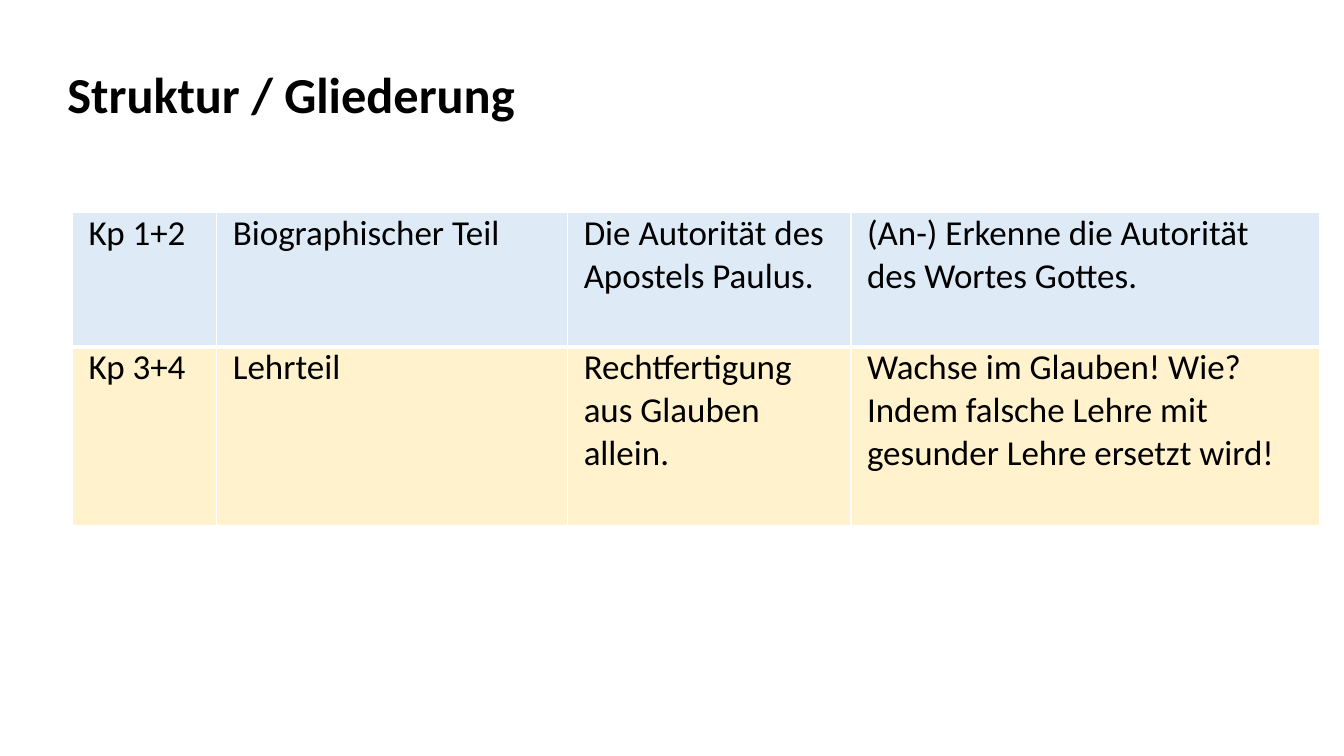
from lxml.etree import SubElement
from pptx import Presentation
from pptx.dml.color import RGBColor
from pptx.enum.text import MSO_ANCHOR, MSO_AUTO_SIZE
from pptx.oxml.ns import qn
from pptx.util import Inches, Pt

# Content
TITLE = "Struktur / Gliederung"
SECTIONS = [
    ("DEEBF7", ["Kp 1+2", "Biographischer Teil",
                "Die Autorität des Apostels Paulus.",
                "(An-) Erkenne die Autorität des Wortes Gottes."]),
    ("FFF2CC", ["Kp 3+4", "Lehrteil",
                "Rechtfertigung aus Glauben allein.",
                "Wachse im Glauben! Wie? Indem falsche Lehre mit "
                "gesunder Lehre ersetzt wird!"]),
]

# Grid in inches
COLUMNS = [1.43, 3.48, 2.81, 4.65]
ROWS = [1.33, 1.77]
TABLE_LEFT, TABLE_TOP = 0.72, 2.11
CELL_INSET = 0.16
THIN, THICK = 1, 3


def color(value):
    return RGBColor.from_string(value)


def style(paragraph, size, bold=False):
    font = paragraph.font
    font.name, font.size, font.bold = "Calibri", Pt(size), bold
    font.color.rgb = color("000000")


def add_borders(cell, top, bottom):
    """White cell edges; they must come before the fill in the cell's XML."""
    properties = cell._tc.get_or_add_tcPr()
    widths = {"a:lnL": THIN, "a:lnR": THIN, "a:lnT": top, "a:lnB": bottom}
    for edge, width in widths.items():
        line = SubElement(properties, qn(edge), w=str(Pt(width)))
        fill = SubElement(line, qn("a:solidFill"))
        SubElement(fill, qn("a:srgbClr"), val="FFFFFF")


deck = Presentation()
deck.slide_width, deck.slide_height = Inches(13.33), Inches(7.5)
slide = deck.slides.add_slide(deck.slide_layouts[6])

# Title
heading = slide.shapes.add_textbox(
    Inches(0.57), Inches(0.58), Inches(4.69), Inches(0.71)).text_frame
heading.word_wrap = False
heading.auto_size = MSO_AUTO_SIZE.SHAPE_TO_FIT_TEXT
heading.text = TITLE
style(heading.paragraphs[0], 36, bold=True)

# Outline table
outline = slide.shapes.add_table(
    len(ROWS), len(COLUMNS), Inches(TABLE_LEFT), Inches(TABLE_TOP),
    Inches(sum(COLUMNS)), Inches(sum(ROWS))).table
outline.first_row = outline.horz_banding = False
for column, width in zip(outline.columns, COLUMNS):
    column.width = Inches(width)
for row, height in zip(outline.rows, ROWS):
    row.height = Inches(height)

for r, (tint, entries) in enumerate(SECTIONS):
    for c, entry in enumerate(entries):
        cell = outline.cell(r, c)
        cell.text = entry
        style(cell.text_frame.paragraphs[0], 25)
        cell.vertical_anchor = MSO_ANCHOR.TOP
        cell.margin_left = cell.margin_right = Inches(CELL_INSET)
        cell.margin_top = cell.margin_bottom = 0
        # The edge between the two rows is the thick one
        add_borders(cell, top=THICK if r == 1 else THIN,
                    bottom=THICK if r == 0 else THIN)
        cell.fill.solid()
        cell.fill.fore_color.rgb = color(tint)

deck.save("out.pptx")
